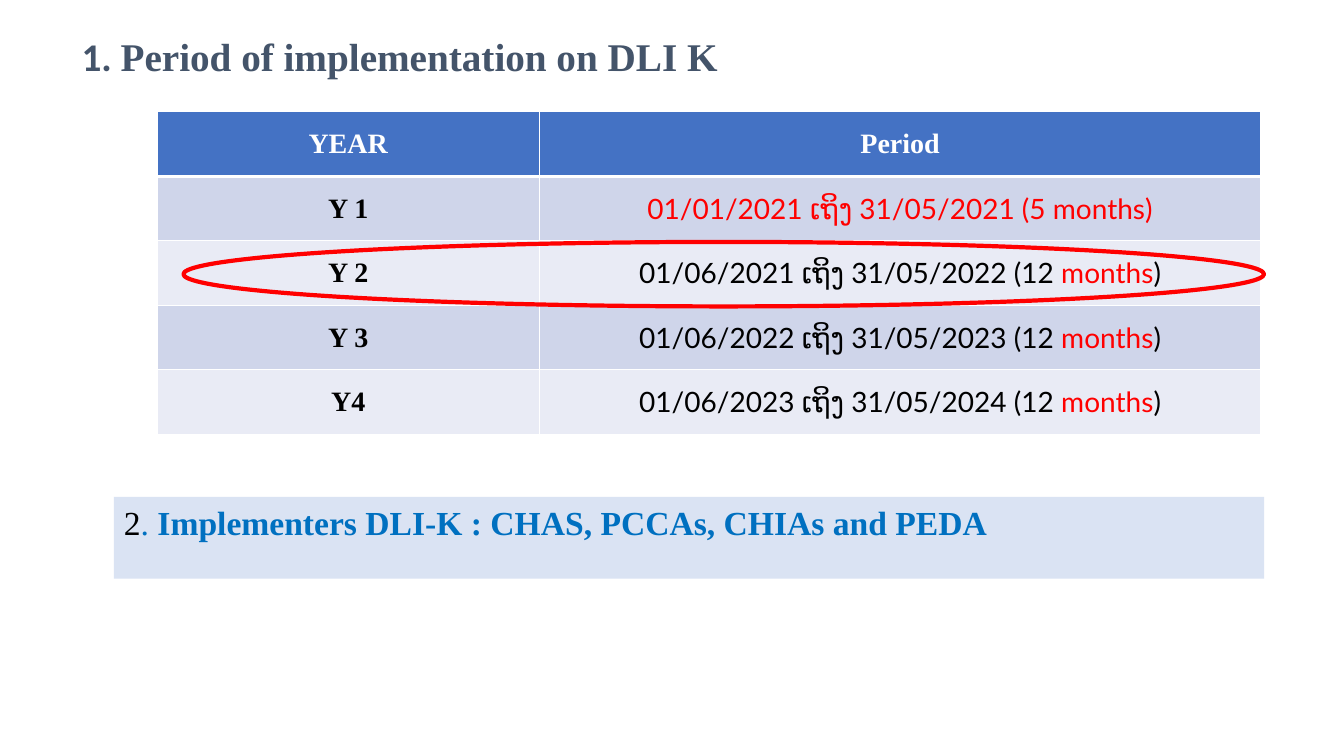
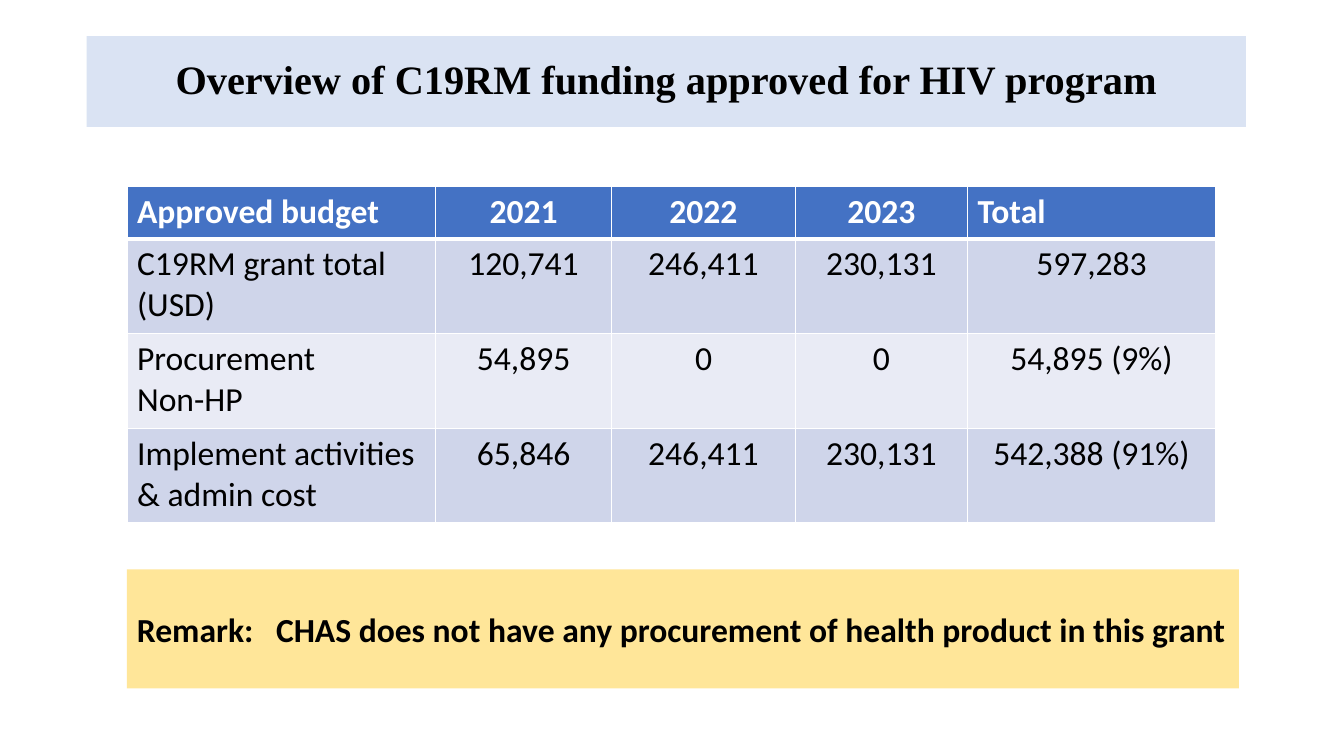
"""Build two slides on the DLI K implementation period and the C19RM budget."""
from dataclasses import dataclass, replace
from typing import Optional, Sequence

from lxml.etree import SubElement
from pptx import Presentation
from pptx.dml.color import RGBColor
from pptx.enum.shapes import MSO_SHAPE
from pptx.enum.text import MSO_ANCHOR, PP_ALIGN
from pptx.oxml.ns import qn
from pptx.util import Emu, Inches, Pt

WIDTH, HEIGHT = Inches(13.333), Inches(7.5)
SERIF, SANS, DATES = "Times New Roman", "Calibri", "Lato"
LEFT, CENTER = PP_ALIGN.LEFT, PP_ALIGN.CENTER
TOP, MIDDLE = MSO_ANCHOR.TOP, MSO_ANCHOR.MIDDLE
COLORS = {
    "black": "000000",
    "white": "FFFFFF",
    "red": "FF0000",
    "slate": "44546A",
    "blue": "0070C0",
    "header": "4472C4",
    "odd": "CFD5EA",
    "even": "E9EBF5",
    "band": "DAE3F3",
    "remark": "FFE699",
}


@dataclass(frozen=True)
class Box:
    """Place on the slide, in percent of its width and height."""
    x: float
    y: float
    w: float
    h: float

    def emu(self) -> tuple[Emu, Emu, Emu, Emu]:
        """Return left, top, width and height as lengths."""
        return (Emu(int(WIDTH * self.x / 100)), Emu(int(HEIGHT * self.y / 100)),
                Emu(int(WIDTH * self.w / 100)), Emu(int(HEIGHT * self.h / 100)))


@dataclass(frozen=True)
class Run:
    """Piece of text in one style; a newline starts a paragraph."""
    text: str
    font: str = SANS
    size: float = 24
    color: str = "black"
    bold: bool = False


@dataclass(frozen=True)
class Cell:
    """Runs of a table cell and their alignment."""
    runs: tuple[Run, ...]
    align: PP_ALIGN = CENTER


@dataclass(frozen=True)
class Panel:
    """Rectangle with text, filled or plain."""
    box: Box
    runs: tuple[Run, ...]
    fill: Optional[str] = None
    align: PP_ALIGN = LEFT
    anchor: MSO_ANCHOR = MIDDLE
    leading: float = 1.0
    tab: float = 0


@dataclass(frozen=True)
class Grid:
    """Table with relative column widths and row heights."""
    box: Box
    cols: tuple[float, ...]
    rows: tuple[float, ...]
    cells: list[list[Cell]]
    anchor: MSO_ANCHOR = TOP


def rgb(name: str) -> RGBColor:
    """Look up a colour."""
    return RGBColor.from_string(COLORS[name])


def write(tf, runs: Sequence[Run], align: PP_ALIGN, leading: float = 1.0) -> None:
    """Write runs into a text frame."""
    p = tf.paragraphs[0]
    p.alignment, p.line_spacing = align, leading
    for run in runs:
        for i, part in enumerate(run.text.split("\n")):
            if i:
                p = tf.add_paragraph()
                p.alignment, p.line_spacing = align, leading
            r = p.add_run()
            r.text = part
            r.font.name, r.font.size, r.font.bold = run.font, Pt(run.size), run.bold
            r.font.color.rgb = rgb(run.color)


def add_panel(s, panel: Panel) -> None:
    """Draw a rectangle with its text."""
    if panel.fill:
        sp = s.shapes.add_shape(MSO_SHAPE.RECTANGLE, *panel.box.emu())
        sp.shadow.inherit = False
        sp.fill.solid()
        sp.fill.fore_color.rgb = rgb(panel.fill)
        sp.line.fill.background()
    else:
        sp = s.shapes.add_textbox(*panel.box.emu())
    tf = sp.text_frame
    tf.word_wrap, tf.vertical_anchor = True, panel.anchor
    write(tf, panel.runs, panel.align, panel.leading)
    if panel.tab:
        stops = SubElement(tf.paragraphs[0]._p.get_or_add_pPr(), qn("a:tabLst"))
        SubElement(stops, qn("a:tab"), pos=str(Inches(panel.tab)), algn="l")


def add_ring(s, box: Box) -> None:
    """Draw a red ellipse outline."""
    sp = s.shapes.add_shape(MSO_SHAPE.OVAL, *box.emu())
    sp.shadow.inherit = False
    sp.fill.background()
    sp.line.color.rgb, sp.line.width = rgb("red"), Pt(3)


def add_borders(cell, row: int) -> None:
    """Give a cell white borders, thick below the header."""
    widths = {"lnL": 1, "lnR": 1, "lnT": 3 if row == 1 else 1, "lnB": 3 if row == 0 else 1}
    for tag, width in widths.items():
        ln = SubElement(cell._tc.get_or_add_tcPr(), qn(f"a:{tag}"), w=str(Pt(width)))
        SubElement(SubElement(ln, qn("a:solidFill")), qn("a:srgbClr"), val=COLORS["white"])


def add_grid(s, grid: Grid) -> None:
    """Draw a table with a header and banded rows."""
    x, y, w, h = grid.box.emu()
    table = s.shapes.add_table(len(grid.rows), len(grid.cols), x, y, w, h).table
    for col, share in zip(table.columns, grid.cols):
        col.width = Emu(int(w * share / sum(grid.cols)))
    for row, share in zip(table.rows, grid.rows):
        row.height = Emu(int(h * share / sum(grid.rows)))
    for i, line in enumerate(grid.cells):
        for j, content in enumerate(line):
            cell = table.cell(i, j)
            add_borders(cell, i)
            cell.fill.solid()
            cell.fill.fore_color.rgb = rgb("header" if i == 0 else "odd" if i % 2 else "even")
            cell.vertical_anchor = grid.anchor
            write(cell.text_frame, content.runs, content.align)


def period_cells() -> list[list[Cell]]:
    """Return the cells of the period table."""
    head = Run("", SERIF, 20, "white", True)
    year = replace(head, color="black")
    date = Run("", DATES, 20)
    red = replace(date, color="red")
    cells = [[Cell((replace(head, text=t),)) for t in ("YEAR", "Period")],
             [Cell((replace(year, text="Y 1"),)),
              Cell((replace(red, text="01/01/2021 ເຖິງ 31/05/2021 (5 months)"),))]]
    for name, start in (("Y 2", 2021), ("Y 3", 2022), ("Y4", 2023)):
        span = f"01/06/{start} ເຖິງ 31/05/{start + 1} (12 "
        cells.append([Cell((replace(year, text=name),)),
                      Cell((replace(date, text=span), replace(red, text="months"),
                            replace(date, text=")")))])
    return cells


def budget_cells() -> list[list[Cell]]:
    """Return the cells of the budget table."""
    lines = (
        ("Approved budget", "2021", "2022", "2023", "Total"),
        ("C19RM grant total (USD)", "120,741", "246,411", "230,131", "597,283"),
        ("Procurement\nNon-HP", "54,895", "0", "0", "54,895 (9%)"),
        ("Implement activities & admin cost", "65,846", "246,411", "230,131", "542,388 (91%)"),
    )
    head, body = Run("", color="white", bold=True), Run("")
    return [[Cell((replace(body if i else head, text=t),),
                  LEFT if j == 0 or t == "Total" else CENTER)
             for j, t in enumerate(line)] for i, line in enumerate(lines)]


def period_slide(s) -> None:
    """Draw the period and the implementers."""
    add_panel(s, Panel(Box(5.33, 1.07, 89.33, 13.33), (
        Run("1. ", SANS, 28, "slate", True),
        Run("Period of implementation on DLI K", SERIF, 28, "slate", True)), leading=0.9))
    add_grid(s, Grid(Box(11.7, 14.8, 82.13, 42.67), (3.79, 7.16), (1,) * 5,
                     period_cells(), MIDDLE))
    add_ring(s, Box(13.65, 32, 80.4, 8.53))
    add_panel(s, Panel(Box(8.48, 65.73, 85.58, 10.8), (
        Run("2", SERIF), Run(". ", SERIF, color="blue"),
        Run("Implementers DLI-K : CHAS, PCCAs, CHIAs and PEDA", SERIF, 24, "blue", True)),
        "band", anchor=TOP))


def budget_slide(s) -> None:
    """Draw the approved funding and the remark."""
    add_panel(s, Panel(Box(6.45, 4.8, 86.25, 12), (
        Run("Overview of C19RM funding approved for HIV program", SERIF, 28.8, bold=True),),
        "band", CENTER, leading=0.9))
    add_panel(s, Panel(Box(9.45, 75.33, 82.73, 15.73), (
        Run("Remark:\tCHAS does not have any procurement of health product in this grant",
            bold=True),), "remark", tab=1.38))
    add_grid(s, Grid(Box(9.45, 24.67, 81, 44.5), (3.06, 1.75, 1.82, 1.71, 2.46),
                     (0.52, 0.94, 0.94, 0.94), budget_cells()))


def main() -> None:
    """Build and save the presentation."""
    prs = Presentation()
    prs.slide_width, prs.slide_height = WIDTH, HEIGHT
    for draw in (period_slide, budget_slide):
        draw(prs.slides.add_slide(prs.slide_layouts[6]))
    prs.save("out.pptx")


if __name__ == "__main__":
    main()
